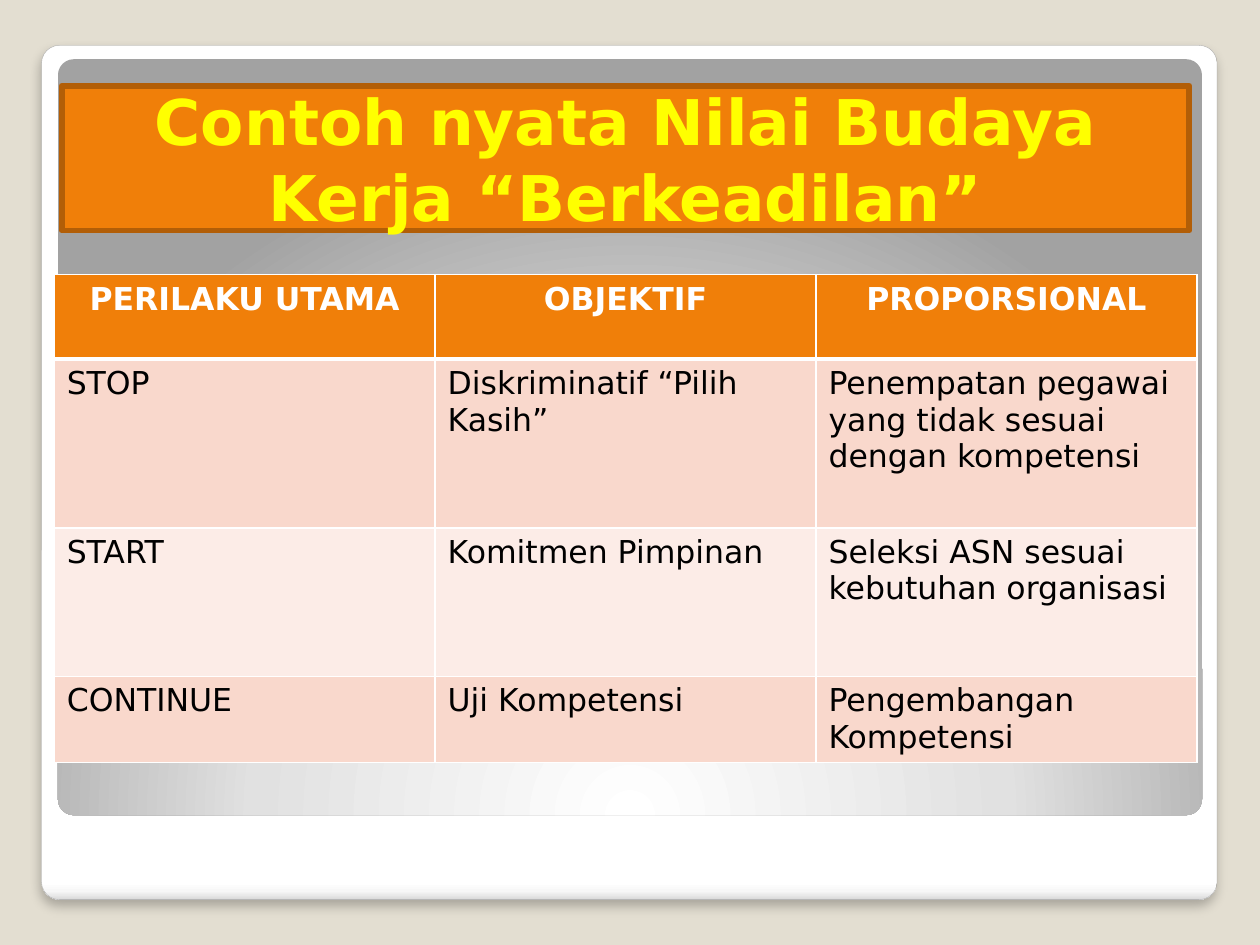
from lxml import etree
from pptx import Presentation
from pptx.dml.color import RGBColor
from pptx.enum.shapes import MSO_SHAPE as Shape
from pptx.enum.text import MSO_ANCHOR as Anchor, MSO_AUTO_SIZE as AutoSize, PP_ALIGN as Align
from pptx.oxml import parse_xml
from pptx.oxml.ns import nsdecls, qn
from pptx.util import Inches, Pt

FONT = "DejaVu Sans"
WHITE, BLACK, ORANGE = "FFFFFF", "000000", "F07F09"
BANDS = ("F9D8CC", "FCECE7")
ROW_HEIGHTS = (0.67, 1.34, 1.18, 0.68)
BEHAVIOURS = (
    ("PERILAKU UTAMA", "OBJEKTIF", "PROPORSIONAL"),
    ("STOP", "Diskriminatif “Pilih Kasih”",
     "Penempatan pegawai yang tidak sesuai dengan kompetensi"),
    ("START", "Komitmen Pimpinan", "Seleksi ASN sesuai kebutuhan organisasi"),
    ("CONTINUE", "Uji Kompetensi", "Pengembangan Kompetensi"),
)
CARD_STOPS = ((0, WHITE), (98, WHITE), (99, "F7F7F7"), (100, "DADADA"))
PANEL_STOPS = ((0, WHITE), (55, "E1E1E1"), (100, "A2A2A2"))
DOWNWARD = '<a:lin ang="5400000" scaled="0"/>'
FROM_BELOW = ('<a:path path="circle"><a:fillToRect l="50000" t="175000" '
              'r="50000" b="-75000"/></a:path>')


def paint(fill, color):
    """Fill with one solid colour given as hex."""
    fill.solid()
    fill.fore_color.rgb = RGBColor.from_string(color)


def write(text_frame, text, size, color, bold, align):
    """Set one paragraph of text and format its run."""
    text_frame.text = text
    paragraph = text_frame.paragraphs[0]
    paragraph.alignment = align
    font = paragraph.runs[0].font
    font.name, font.size, font.bold = FONT, Pt(size), bold
    font.color.rgb = RGBColor.from_string(color)


def add_rounded_panel(slide, box, stops, direction):
    """Add a rounded rectangle with a gradient and no outline."""
    panel = slide.shapes.add_shape(Shape.ROUNDED_RECTANGLE, *map(Inches, box))
    panel.adjustments[0] = 0.021
    panel.shadow.inherit = False
    panel.line.fill.background()
    stop_xml = "".join(
        f'<a:gs pos="{position * 1000}"><a:srgbClr val="{color}"/></a:gs>'
        for position, color in stops)
    gradient = parse_xml(f'<a:gradFill {nsdecls("a")} rotWithShape="1">'
                         f'<a:gsLst>{stop_xml}</a:gsLst>{direction}</a:gradFill>')
    panel._element.spPr.find(qn("a:prstGeom")).addnext(gradient)
    return panel


def add_soft_shadow(panel):
    """Give a panel a blurred shadow falling straight down."""
    effects = panel._element.spPr.find(qn("a:effectLst"))
    shadow = etree.SubElement(
        effects, qn("a:outerShdw"), blurRad=str(Pt(6)), dist=str(Pt(4)),
        dir="5400000", algn="ctr", rotWithShape="0")
    color = etree.SubElement(shadow, qn("a:srgbClr"), val=BLACK)
    etree.SubElement(color, qn("a:alpha"), val="25000")


def place_title(slide, text):
    """Turn the title placeholder into the orange banner above the panels."""
    title = slide.shapes.title
    slide.shapes._spTree.append(title._element)
    title.left, title.top, title.width, title.height = map(Inches, (0.49, 0.68, 8.95, 1.15))
    paint(title.fill, ORANGE)
    paint(title.line.fill, "B25E07")
    title.line.width = Pt(3.35)
    title.text_frame.word_wrap = True
    title.text_frame.auto_size = AutoSize.NONE
    title.text_frame.vertical_anchor = Anchor.MIDDLE
    write(title.text_frame, text, 36, "FFFF00", True, Align.CENTER)


def add_borders(cell, top, bottom):
    """Draw white cell borders with the given top and bottom widths."""
    properties = cell._tc.get_or_add_tcPr()
    for index, (side, width) in enumerate((("L", 1), ("R", 1), ("T", top), ("B", bottom))):
        properties.insert(index, parse_xml(
            f'<a:ln{side} {nsdecls("a")} w="{Pt(width)}"><a:solidFill>'
            f'<a:srgbClr val="{WHITE}"/></a:solidFill></a:ln{side}>'))


def add_behaviour_table(slide):
    """Add the table of behaviours with a header and banded rows."""
    frame = slide.shapes.add_table(
        len(BEHAVIOURS), len(BEHAVIOURS[0]), Inches(0.43), Inches(2.18),
        Inches(9.07), Inches(sum(ROW_HEIGHTS)))
    table = frame.table
    for row_index, (texts, height) in enumerate(zip(BEHAVIOURS, ROW_HEIGHTS)):
        table.rows[row_index].height = Inches(height)
        header = row_index == 0
        for column_index, text in enumerate(texts):
            cell = table.cell(row_index, column_index)
            paint(cell.fill, ORANGE if header else BANDS[(row_index - 1) % 2])
            add_borders(cell, 3 if row_index == 1 else 1, 3 if header else 1)
            write(cell.text_frame, text, 18, WHITE if header else BLACK, header,
                  Align.CENTER if header else Align.LEFT)


def main():
    """Build the slide and save it."""
    deck = Presentation()
    deck.slide_width, deck.slide_height = Inches(10), Inches(7.5)
    slide = deck.slides.add_slide(deck.slide_layouts[5])
    paint(slide.background.fill, "E3DED1")
    card = add_rounded_panel(slide, (0.33, 0.36, 9.33, 6.78), CARD_STOPS, DOWNWARD)
    paint(card.line.fill, "A4A4A4")
    card.line.width = Pt(0.16)
    add_soft_shadow(card)
    add_rounded_panel(slide, (0.46, 0.47, 9.08, 6), PANEL_STOPS, FROM_BELOW)
    place_title(slide, "Contoh nyata Nilai Budaya Kerja “Berkeadilan”")
    add_behaviour_table(slide)
    deck.save("out.pptx")


if __name__ == "__main__":
    main()
